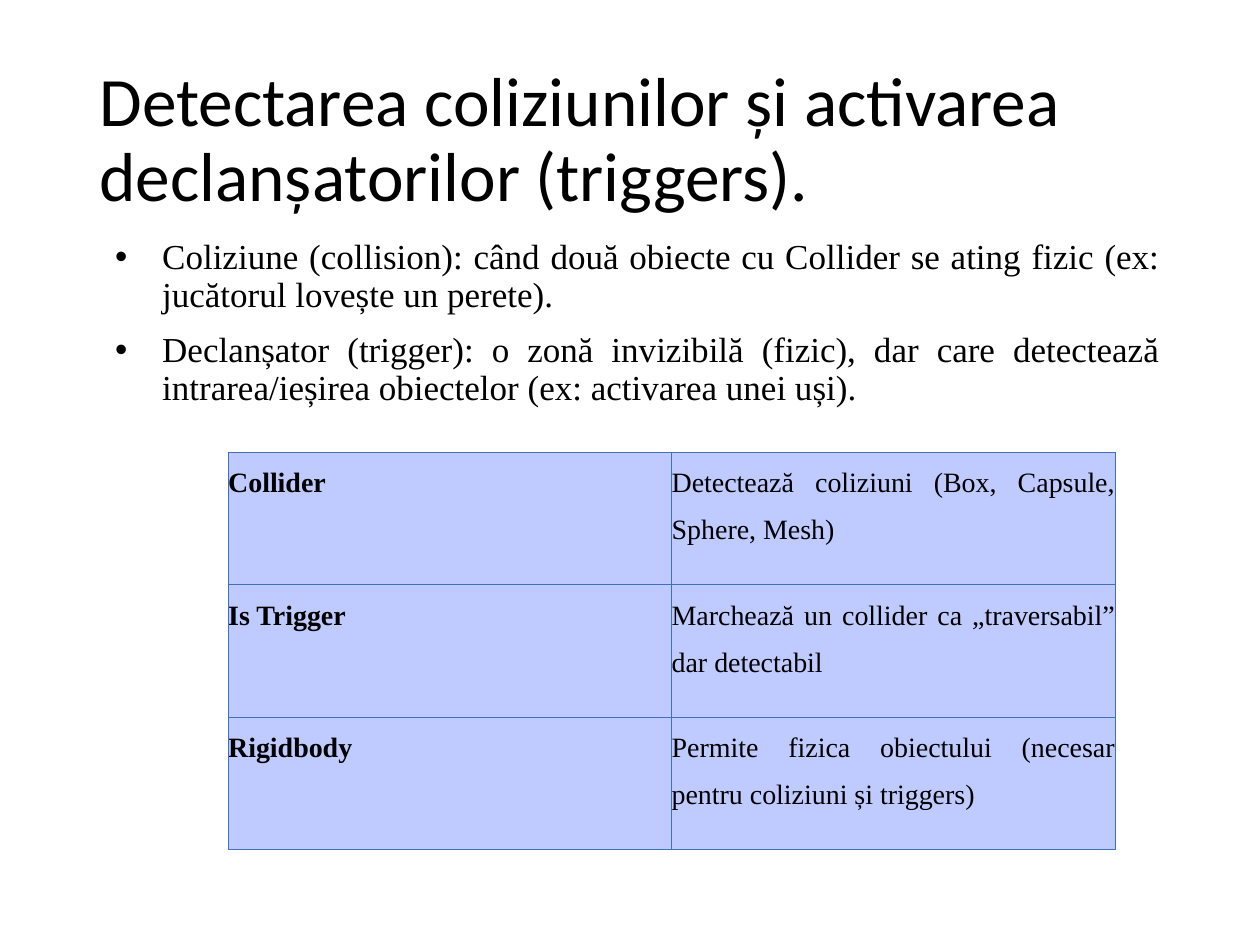
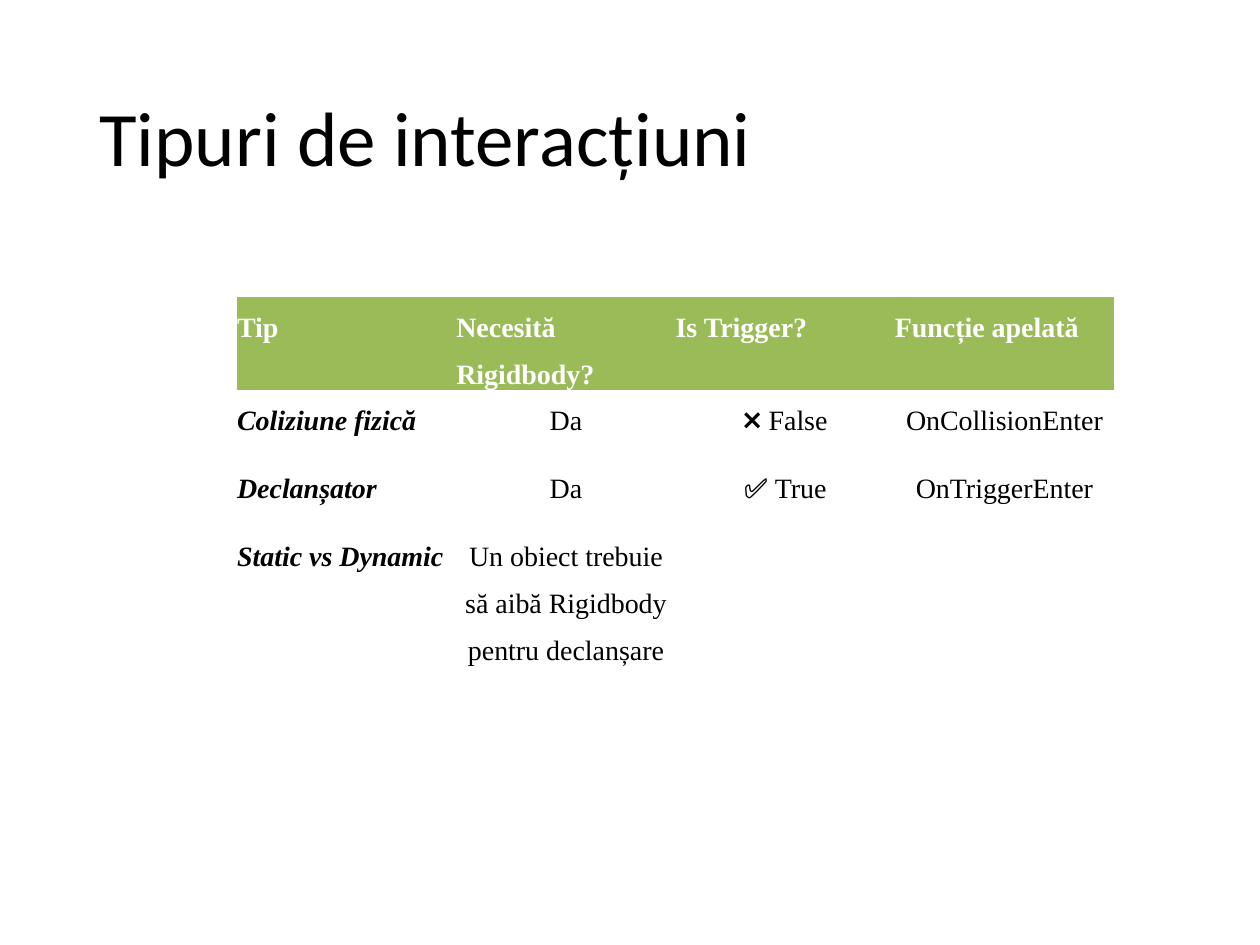
from lxml import etree
from pptx import Presentation
from pptx.dml.color import RGBColor
from pptx.enum.text import MSO_ANCHOR, MSO_AUTO_SIZE, PP_ALIGN
from pptx.oxml.ns import qn
from pptx.util import Cm, Pt

LEFT, CENTER, JUSTIFY = PP_ALIGN.LEFT, PP_ALIGN.CENTER, PP_ALIGN.JUSTIFY
MIDDLE, NO_FIT = MSO_ANCHOR.MIDDLE, MSO_AUTO_SIZE.NONE
TITLE_FONT, BODY_FONT = "Calibri", "Times New Roman"
BLACK, WHITE, GREEN, BLUE, BORDER = "000000", "FFFFFF", "9BBB59", "BFCBFF", "3F6FC3"
NO_STYLE = "{2D5ABB26-0587-4C30-8999-92F81FD0307C}"
MARGIN, CONTENT_W = Cm(1.75), Cm(21.89)


def add_run(p, text, size, font=BODY_FONT, color=BLACK, bold=False, italic=False):
    r = p.add_run()
    r.text = text
    r.font.size, r.font.name = Pt(size), font
    r.font.bold, r.font.italic = bold, italic
    r.font.color.rgb = RGBColor.from_string(color)


components = [
    ["Collider", "Detectează coliziuni (Box, Capsule, Sphere, Mesh)"],
    ["Is Trigger", "Marchează un collider ca „traversabil” dar detectabil"],
    ["Rigidbody", "Permite fizica obiectului (necesar pentru coliziuni și triggers)"],
]
interactions = [
    ["Tip", "Necesită Rigidbody?", "Is Trigger?", "Funcție apelată"],
    ["Coliziune fizică", "Da", "❌ False", "OnCollisionEnter"],
    ["Declanșator", "Da", "✅ True", "OnTriggerEnter"],
    ["Static vs Dynamic", "Un obiect trebuie să aibă Rigidbody pentru declanșare", "", ""],
]
slides = [
    ("Detectarea coliziunilor și activarea declanșatorilor (triggers).", 39.6,
     components, 4.6, 9.12, 8.94, [2.67] * 3),
    ("Tipuri de interacțiuni", 44,
     interactions, 4.78, 5.99, 4.42, [1.37, 1.37, 1.37, 4.14]),
]
bullets = [
    "Coliziune (collision): când două obiecte cu Collider se ating fizic (ex: jucătorul lovește un perete).",
    "Declanșator (trigger): o zonă invizibilă (fizic), dar care detectează intrarea/ieșirea obiectelor "
    "(ex: activarea unei uși).",
]

prs = Presentation()
prs.slide_width, prs.slide_height = Cm(25.4), Cm(19.05)

for title, title_size, rows, left, top, col_w, row_heights in slides:
    s = prs.slides.add_slide(prs.slide_layouts[5])
    sp = s.shapes.title
    sp.left, sp.top, sp.width, sp.height = MARGIN, Cm(1.02), CONTENT_W, Cm(3.68)
    tf = sp.text_frame
    tf.auto_size, tf.vertical_anchor, tf.word_wrap = NO_FIT, MIDDLE, True
    p = tf.paragraphs[0]
    p.alignment, p.line_spacing = LEFT, 0.9
    add_run(p, title, title_size, TITLE_FONT)

    if rows is components:
        tf = s.shapes.add_textbox(MARGIN, Cm(4.7), CONTENT_W, Cm(12.09)).text_frame
        tf.word_wrap = True
        for i, text in enumerate(bullets):
            p = tf.add_paragraph() if i else tf.paragraphs[0]
            p.alignment, p.line_spacing, p.space_before = JUSTIFY, 0.9, Pt(10)
            add_run(p, text, 20)
            pPr = p._p.get_or_add_pPr()
            pPr.set("marL", str(Cm(1.27)))
            pPr.set("indent", str(-Cm(0.95)))
            etree.SubElement(pPr, qn("a:buFont")).set("typeface", "Arial")
            etree.SubElement(pPr, qn("a:buChar")).set("char", "•")

    n_cols = len(rows[0])
    frame = s.shapes.add_table(len(rows), n_cols, Cm(left), Cm(top),
                               Cm(col_w * n_cols), Cm(sum(row_heights)))
    frame.element.find(".//" + qn("a:tableStyleId")).text = NO_STYLE
    table = frame.table
    table.horz_banding = False
    for col in table.columns:
        col.width = Cm(col_w)
    for row, height in zip(table.rows, row_heights):
        row.height = Cm(height)

    for y, values in enumerate(rows):
        for x, text in enumerate(values):
            cell = table.cell(y, x)
            cell.margin_left = cell.margin_right = cell.margin_top = cell.margin_bottom = 0
            header = rows is interactions and y == 0
            if header or rows is components:
                cell.fill.solid()
                cell.fill.fore_color.rgb = RGBColor.from_string(GREEN if header else BLUE)
            else:
                cell.fill.background()
            if rows is components:
                tcPr = cell._tc.get_or_add_tcPr()
                for i, side in enumerate(("lnL", "lnR", "lnT", "lnB")):
                    ln = etree.Element(qn("a:" + side), w=str(Pt(0.75)))
                    fill = etree.SubElement(ln, qn("a:solidFill"))
                    etree.SubElement(fill, qn("a:srgbClr")).set("val", BORDER)
                    tcPr.insert(i, ln)
            if text:
                p = cell.text_frame.paragraphs[0]
                centered = rows is interactions and y > 0 and x > 0
                p.alignment, p.line_spacing = CENTER if centered else JUSTIFY, 1.5
                add_run(p, text, 16, color=WHITE if header else BLACK, bold=header or x == 0,
                        italic=rows is interactions and y > 0 and x == 0)

prs.save("out.pptx")
